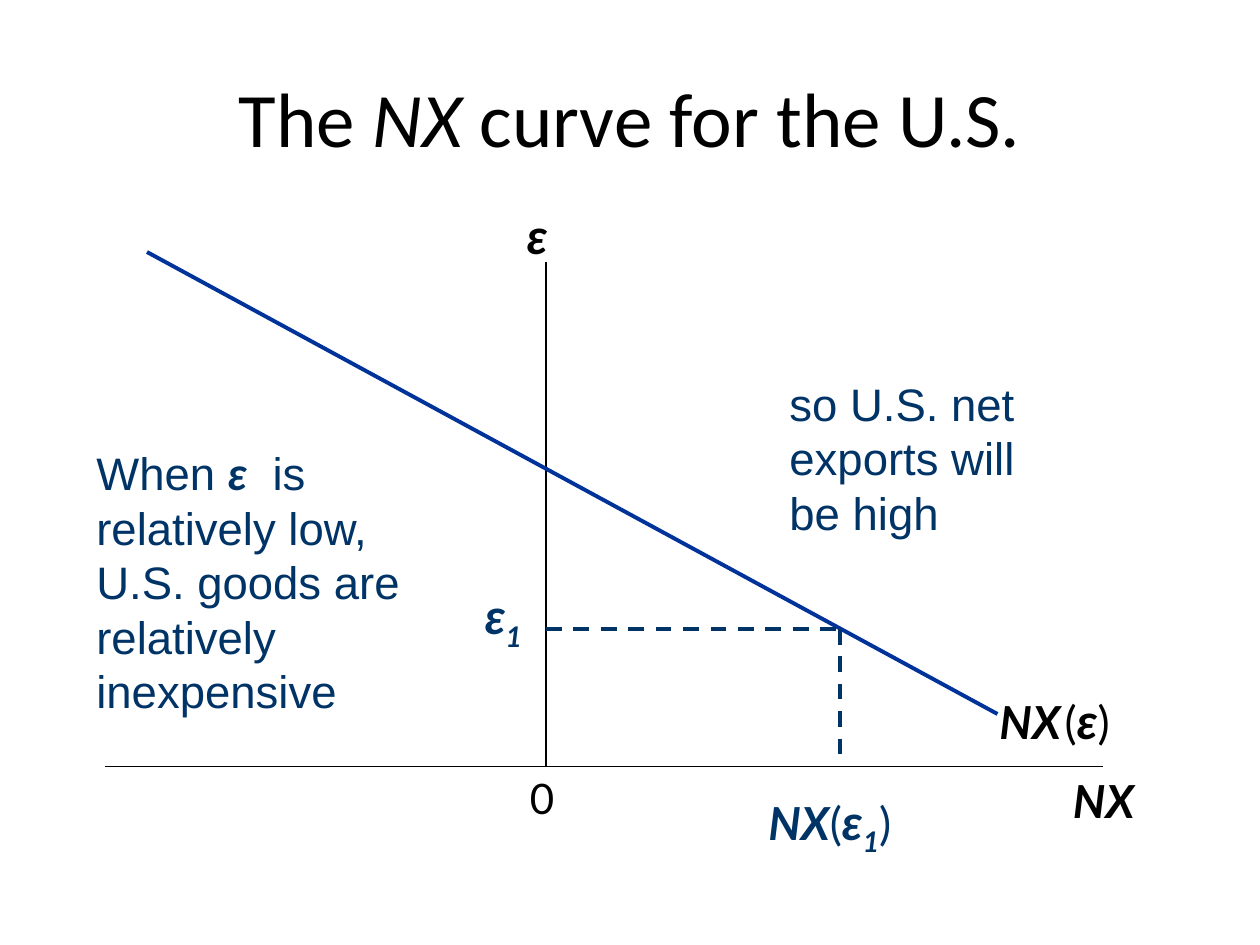
import pptx
import pptx.dml.color
import pptx.enum.dml
import pptx.enum.shapes
import pptx.enum.text
import pptx.oxml
import pptx.util

COLORS = {"ink": "000000", "curve": "003399", "note": "003366"}
FORMATS = {
    "title": {"name": "Calibri", "size": 44, "italic": False},
    "title symbol": {"name": "Calibri", "size": 44, "italic": True},
    "origin": {"name": "Lato", "size": 24},
    "variable": {"name": "Lato", "size": 26, "bold": True, "italic": True},
    "rate": {"name": "Lato", "size": 28, "bold": True, "italic": True},
    "subscript": {"name": "Lato", "size": 28, "bold": True, "italic": True},
    "bracket": {"name": "Lato", "size": 26},
    "gap": {"name": "Arial", "size": 8},
    "prose": {"name": "Arial", "size": 26},
}

deck = pptx.Presentation()
deck.slide_width = pptx.util.Inches(10)
deck.slide_height = pptx.util.Inches(7.5)
column = deck.slide_width / 120
row = deck.slide_height / 90
slide = deck.slides.add_slide(deck.slide_layouts[5])


def place(left, top, width, height):
    return [round(n * unit) for n, unit in zip((left, top, width, height), (column, row) * 2)]


def write(paragraph, pieces, color):
    for words, style in pieces:
        if words == "\n":
            paragraph.add_line_break()
            continue
        run = paragraph.add_run()
        run.text = words
        for key, value in FORMATS[style].items():
            setattr(run.font, key, pptx.util.Pt(value) if key == "size" else value)
        run.font.color.rgb = pptx.dml.color.RGBColor.from_string(COLORS[color])
        if style == "subscript":
            run.font._element.set("baseline", "-25000")


heading = slide.shapes.title
heading.left, heading.top, heading.width, heading.height = place(6, 3.6, 108, 15)
heading.text_frame.vertical_anchor = pptx.enum.text.MSO_ANCHOR.MIDDLE
heading.text_frame.paragraphs[0].alignment = pptx.enum.text.PP_ALIGN.CENTER
write(
    heading.text_frame.paragraphs[0],
    [("The ", "title"), ("NX", "title symbol"), (" curve for the U.S.", "title")],
    "ink",
)

axis_x, axis_y = 52, 73
export_x, rate_y = 80, 59.9
for start_x, start_y, end_x, end_y, color, weight, dashed in [
    (10, axis_y, 105, axis_y, "ink", 1, False),
    (axis_x, 25, axis_x, axis_y, "ink", 1, False),
    (14, 24, 95, 68, "curve", 2.25, False),
    (axis_x, rate_y, export_x, rate_y, "note", 2.25, True),
    (export_x, rate_y, export_x, 72.7, "note", 2.25, True),
]:
    segment = slide.shapes.add_connector(
        pptx.enum.shapes.MSO_CONNECTOR.STRAIGHT, *place(start_x, start_y, end_x, end_y)
    )
    segment.line.color.rgb = pptx.dml.color.RGBColor.from_string(COLORS[color])
    segment.line.width = pptx.util.Pt(weight)
    if dashed:
        segment.line.dash_style = pptx.enum.dml.MSO_LINE.DASH
    segment._element.spPr.append(pptx.oxml.parse_xml(
        '<a:effectLst xmlns:a="http://schemas.openxmlformats.org/drawingml/2006/main"/>'
    ))

for area, color, pieces in [
    ((49.3, 73, 6, 6), "ink", [("0", "origin")]),
    ((101, 73, 9, 6.4), "ink", [("NX", "variable")]),
    ((49, 19, 6, 6.8), "ink", [("ε", "rate")]),
    ((94, 65.2, 15, 6.8), "ink",
     [("NX", "variable"), (" ", "gap"), ("(", "bracket"), ("ε", "rate"), (")", "bracket")]),
    ((45, 55.2, 8, 6.8), "note", [("ε", "rate"), ("1", "subscript")]),
    ((8, 41.8, 35, 27.2), "note",
     [("When ", "prose"), ("ε", "variable"), ("  is relatively low, ", "prose"), ("\n", "prose"),
      ("U.S. goods are relatively inexpensive", "prose")]),
    ((72, 74.8, 18, 6.8), "note",
     [("NX", "variable"), ("(", "bracket"), ("ε", "rate"), ("1", "subscript"), (")", "bracket")]),
    ((74, 35.2, 27, 16.8), "note",
     [("so U.S. net exports will ", "prose"), ("\n", "prose"), ("be high", "prose")]),
]:
    label = slide.shapes.add_textbox(*place(*area)).text_frame
    label.word_wrap = True
    label.auto_size = pptx.enum.text.MSO_AUTO_SIZE.SHAPE_TO_FIT_TEXT
    write(label.paragraphs[0], pieces, color)

deck.save("out.pptx")
